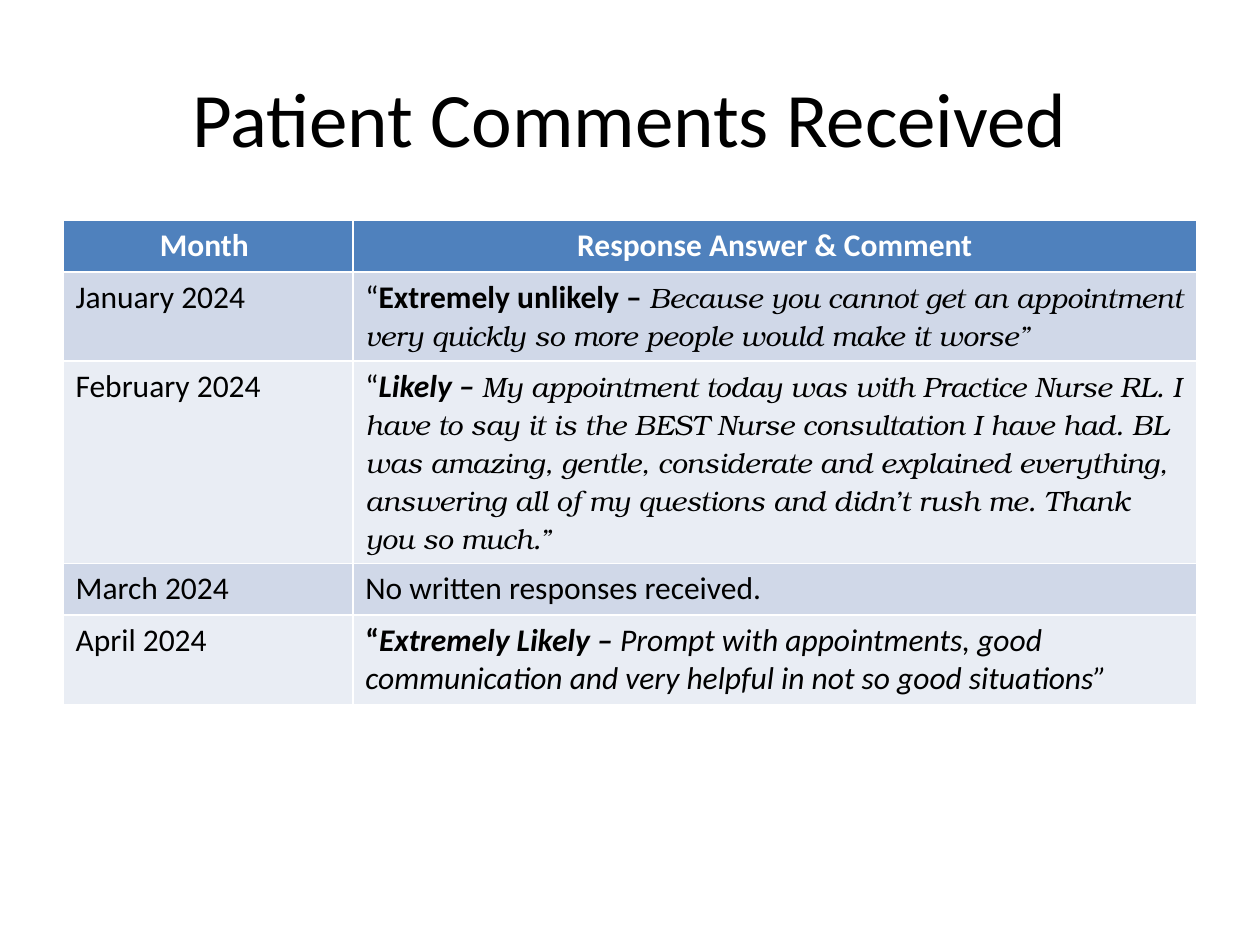
from pptx import Presentation
from pptx.dml.color import RGBColor
from pptx.enum.text import MSO_ANCHOR, PP_ALIGN
from pptx.util import Inches, Pt

CENTER = PP_ALIGN.CENTER
LEFT = PP_ALIGN.LEFT
MIDDLE = MSO_ANCHOR.MIDDLE

W, H = Inches(10), Inches(7.5)
BODY = "Calibri"
QUOTE = "TeX Gyre Bonum"
HEADER_FILL = "4F81BD"
BAND_FILLS = ["D0D8E8", "E9EDF4"]
COLUMN_SHARES = [2.3 / 9, 6.7 / 9]

PLAIN = (BODY, 18, False, False)
BOLD = (BODY, 18, True, False)
BOLD_ITALIC = (BODY, 18, True, True)
ITALIC = (BODY, 18, False, True)
QUOTED = (QUOTE, 16, False, True)

HEADINGS = ["Month ", "Response Answer & Comment"]
COMMENTS = [
    ("January 2024", [
        ("“", PLAIN),
        ("Extremely unlikely – ", BOLD),
        ("Because you cannot get an appointment very quickly so more "
         "people would make it worse”", QUOTED)]),
    ("February 2024", [
        ("“", PLAIN),
        ("Likely – ", BOLD_ITALIC),
        ("My appointment today was with Practice Nurse RL. I have to say it "
         "is the BEST Nurse consultation I have had. BL was amazing, gentle, "
         "considerate and explained everything, answering all of my questions "
         "and didn’t rush me. Thank you so much.”", QUOTED)]),
    ("March 2024", [("No written responses received.", PLAIN)]),
    ("April 2024", [
        ("“", BOLD),
        ("Extremely Likely – ", BOLD_ITALIC),
        ("Prompt with appointments, good communication and very helpful in "
         "not so good situations”", ITALIC)]),
]


def rgb(value):
    return RGBColor.from_string(value)


def set_font(font, style, color):
    font.name, size, font.bold, font.italic = style
    font.size = Pt(size)
    font.color.rgb = rgb(color)


def add_title(s, text, left, top, width, height):
    sp = s.shapes.title
    sp.left, sp.top, sp.width, sp.height = left, top, width, height
    tf = sp.text_frame
    tf.text = text
    tf.vertical_anchor = MIDDLE
    p = tf.paragraphs[0]
    p.alignment = CENTER
    set_font(p.font, (BODY, 44, False, False), "000000")


def fill_cell(cell, runs, fill, color="000000", align=LEFT):
    cell.fill.solid()
    cell.fill.fore_color.rgb = rgb(fill)
    p = cell.text_frame.paragraphs[0]
    p.alignment = align
    if len(runs) == 1:
        set_font(p.font, runs[0][1], color)
    for text, style in runs:
        r = p.add_run()
        r.text = text
        if len(runs) > 1:
            set_font(r.font, style, color)


def add_comments_table(s, left, top, width, row_height):
    rows = len(COMMENTS) + 1
    table = s.shapes.add_table(rows, len(HEADINGS), left, top, width,
                               row_height * rows).table
    for column, share in zip(table.columns, COLUMN_SHARES):
        column.width = int(width * share)
    for col, heading in enumerate(HEADINGS):
        fill_cell(table.cell(0, col), [(heading, BOLD)], HEADER_FILL,
                  "FFFFFF", CENTER)
    for i, (month, runs) in enumerate(COMMENTS):
        fill = BAND_FILLS[i % 2]
        fill_cell(table.cell(i + 1, 0), [(month, PLAIN)], fill)
        fill_cell(table.cell(i + 1, 1), runs, fill)


def main():
    prs = Presentation()
    prs.slide_width, prs.slide_height = W, H
    s = prs.slides.add_slide(prs.slide_layouts[5])
    margin, content = int(W * 0.05), int(W * 0.9)
    add_title(s, "Patient Comments Received", margin, int(H * 0.04),
              content, int(H / 6))
    add_comments_table(s, margin, int(H * 7 / 30), content, Inches(0.41))
    prs.save("out.pptx")


if __name__ == "__main__":
    main()
